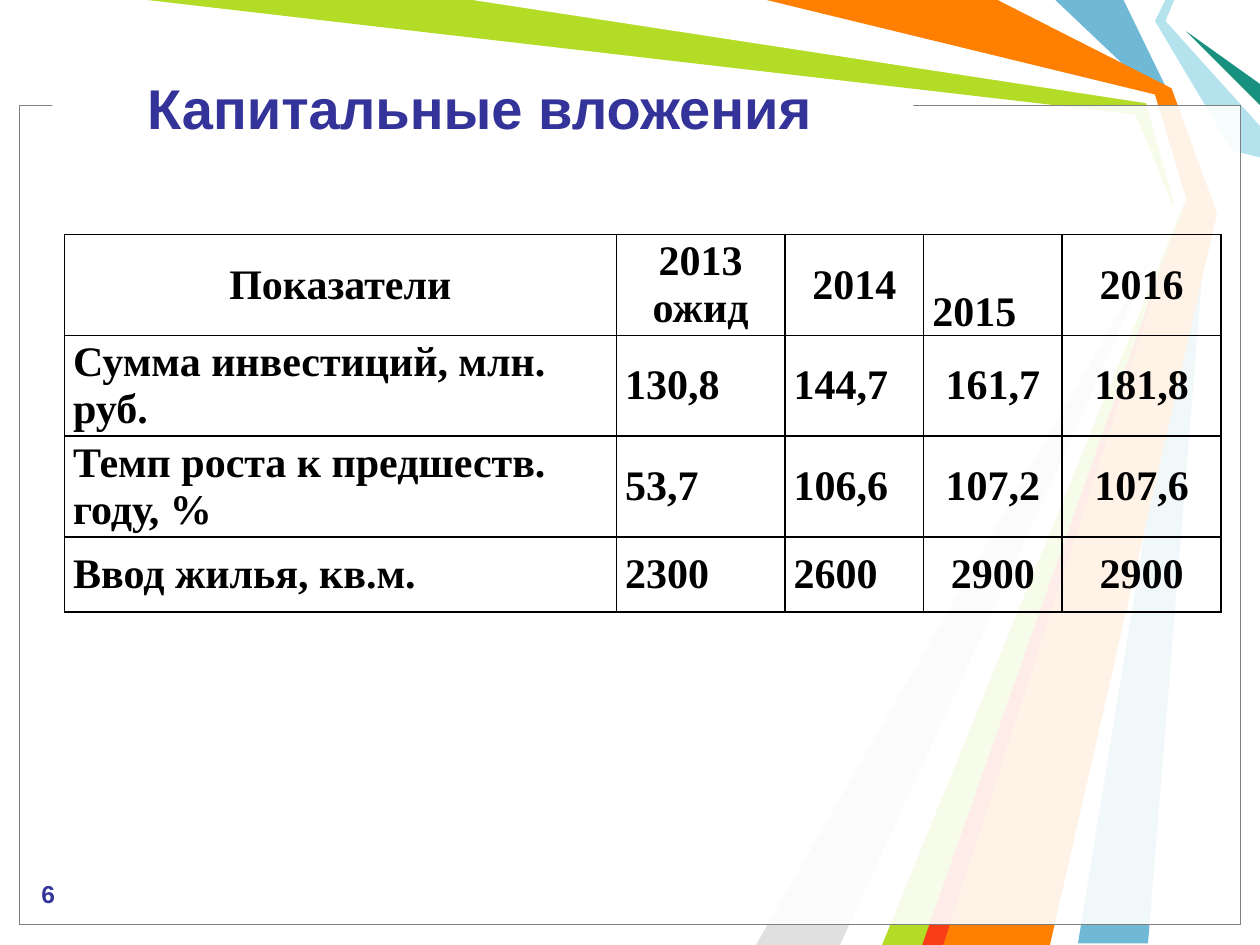
from lxml.etree import SubElement as Sub
from pptx import Presentation
from pptx.dml.color import RGBColor
from pptx.enum.shapes import MSO_SHAPE as Shape
from pptx.enum.text import MSO_ANCHOR as Anchor, PP_ALIGN as Align
from pptx.oxml.ns import qn
from pptx.util import Pt

RAYS = [
    ("6FB9D7", [(642, 0), (669, 55.5), (690, 120), (656, 539), (616, 539),
                (684, 120), (660, 54), (603, 0)]),
    ("B3DC27", [(84, 0), (276, 0), (658, 56), (678, 122), (534, 540),
                (498, 540), (673, 124.5), (649, 65.5)]),
    ("E0E0E0", [(480, 540), (667.5, 130), (432, 540)]),
    ("FFFFFF", [(270, 0), (655, 59), (671, 117), (486, 540), (504, 540),
                (677.5, 114), (660, 54), (432, 0)]),
    ("B4E3EE", [(666, 0), (660, 12), (704, 86), (720, 90), (720, 72),
                (666, 12), (671, 0)]),
    ("189180", [(720, 60), (678, 18), (720, 48)]),
    ("FF7F00", [(438, 0), (570, 0), (669.5, 50.5), (695.5, 122), (600, 540),
                (528, 540), (678, 114), (660, 54)]),
    ("F93D17", [(527, 540), (671, 132), (539, 540)]),
]
COLS = [315.4, 96.4, 79.2, 79.2, 90.8]
ROWS = [56, 53, 53, 43]
DATA = [
    ["Показатели", "2013\nожид", "2014", "2015", "2016"],
    ["Сумма инвестиций, млн. руб.", "130,8", "144,7", "161,7", "181,8"],
    ["Темп роста к предшеств. году, %", "53,7", "106,6", "107,2", "107,6"],
    ["Ввод жилья, кв.м.", "2300", "2600", "2900", "2900"],
]


def rgb(code):
    return RGBColor.from_string(code)


def paint(shape, fill, line=None):
    shape.shadow.inherit = False
    shape.fill.solid()
    shape.fill.fore_color.rgb = rgb(fill)
    if line:
        shape.line.color.rgb = rgb(line)
        shape.line.width = Pt(0.75)
    else:
        shape.line.fill.background()


def add_ray(slide, color, dots):
    first, *rest = [(Pt(x), Pt(y)) for x, y in dots]
    form = slide.shapes.build_freeform(*first, scale=1.0)
    form.add_line_segments(rest, close=True)
    paint(form.convert_to_shape(), color)


def add_rect(slide, box, fill, line=None, alpha=None):
    rect = slide.shapes.add_shape(Shape.RECTANGLE, *map(Pt, box))
    paint(rect, fill, line)
    if alpha:
        tint = rect.fill._xPr.find(qn("a:solidFill"))[0]
        Sub(tint, qn("a:alpha"), val=str(alpha * 1000))


def style(para, size, face, color):
    font = para.font
    font.size, font.name, font.bold = Pt(size), face, True
    font.color.rgb = rgb(color)


def add_text(slide, box, text, size, anchor=Anchor.TOP, pitch=None):
    frame = slide.shapes.add_textbox(*map(Pt, box)).text_frame
    frame.word_wrap = True
    frame.vertical_anchor = anchor
    para = frame.paragraphs[0]
    para.text = text
    para.line_spacing = pitch
    style(para, size, "Arial", "333399")


def set_edges(cell):
    """Draw a thin black border on all four sides."""
    props = cell._tc.get_or_add_tcPr()
    for side in "LRTB":
        edge = Sub(props, qn(f"a:ln{side}"), w=str(Pt(1)))
        Sub(Sub(edge, qn("a:solidFill")), qn("a:srgbClr"), val="000000")


def fill_cell(cell, text, align, anchor):
    set_edges(cell)
    cell.fill.background()
    cell.margin_left = cell.margin_right = Pt(5)
    cell.margin_top = cell.margin_bottom = 0
    cell.vertical_anchor = anchor
    cell.text = text
    for para in cell.text_frame.paragraphs:
        para.alignment = align
        style(para, 24, "Times New Roman", "000000")


def add_grid(slide):
    size = sum(COLS), sum(ROWS)
    table = slide.shapes.add_table(len(ROWS), len(COLS), Pt(36.8), Pt(134),
                                   *map(Pt, size)).table
    table.first_row = table.horz_banding = False
    for col, width in zip(table.columns, COLS):
        col.width = Pt(width)
    for r, (height, texts) in enumerate(zip(ROWS, DATA)):
        table.rows[r].height = Pt(height)
        for c, text in enumerate(texts):
            low = text == "2015"
            mid = not low and (r == 0 or c > 2)
            fill_cell(table.cell(r, c), text,
                      Align.CENTER if mid else Align.LEFT,
                      Anchor.BOTTOM if low else Anchor.MIDDLE)


def main():
    deck = Presentation()
    deck.slide_width, deck.slide_height = Pt(720), Pt(540)
    slide = deck.slides.add_slide(deck.slide_layouts[6])
    for color, dots in RAYS:
        add_ray(slide, color, dots)
    for line in ("000000", "808080"):
        add_rect(slide, (11.3, 60.3, 697.7, 468), "FFFFFF", line, 69)
    add_rect(slide, (30, 53.3, 492, 12), "FFFFFF")
    add_text(slide, (77, 26, 396, 70), "Капитальные вложения", 32,
             Anchor.MIDDLE)
    add_text(slide, (16.5, 500.4, 34, 24), "6", 14, pitch=0.93)
    add_grid(slide)
    deck.save("out.pptx")


if __name__ == "__main__":
    main()
